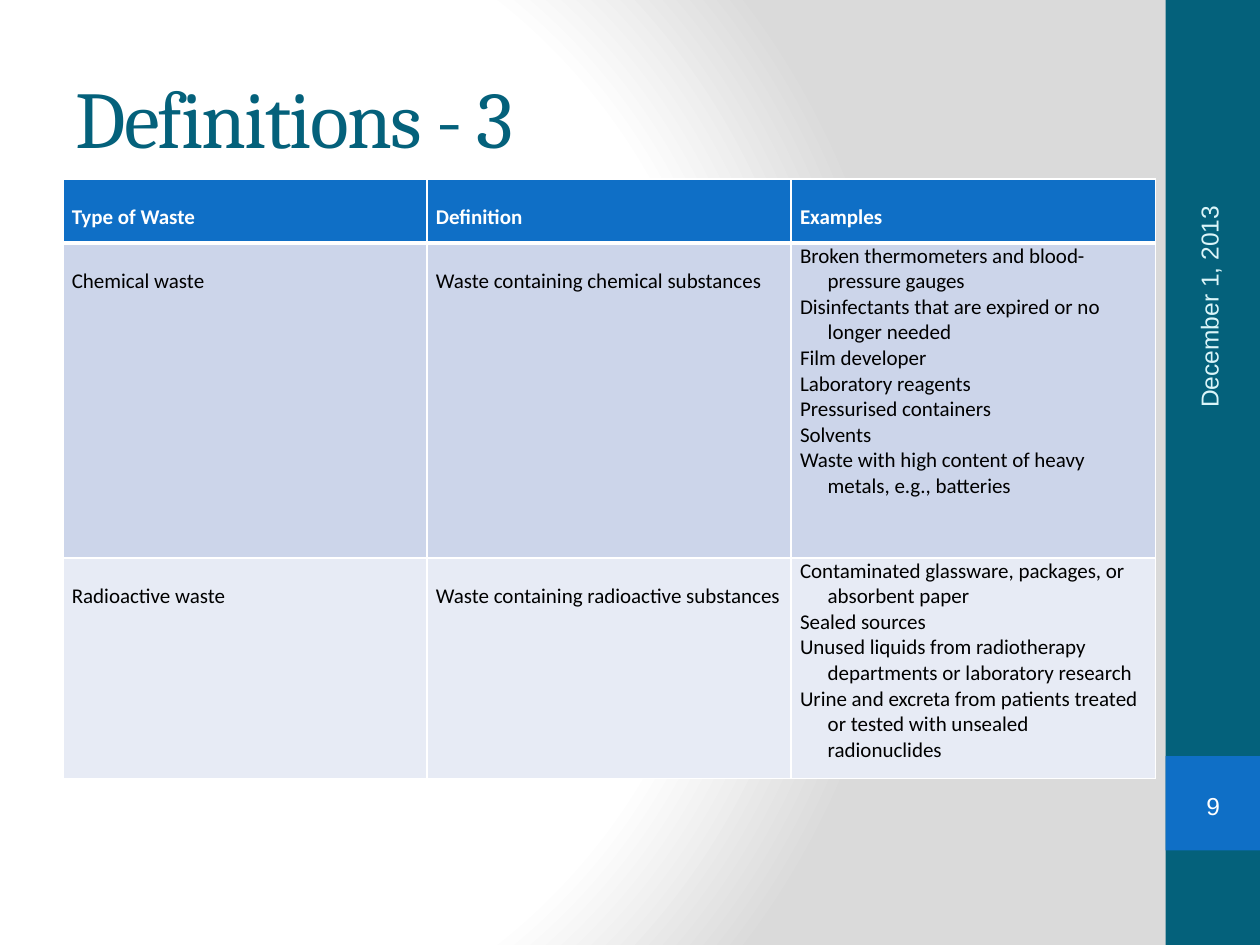
from lxml import etree
from pptx import Presentation
from pptx.dml.color import RGBColor
from pptx.enum import shapes, text
from pptx.oxml import parse_xml
from pptx.oxml.ns import nsdecls, qn
from pptx.util import Inches, Pt

TEAL = RGBColor(0x04, 0x61, 0x7B)
BLUE = RGBColor(0x0F, 0x6F, 0xC6)
PALE_CYAN = RGBColor(0xDB, 0xF5, 0xF9)
WHITE = RGBColor(0xFF, 0xFF, 0xFF)
BLACK = RGBColor(0, 0, 0)
GREY = RGBColor(0xDA, 0xDA, 0xDA)
ROW_FILLS = [BLUE, RGBColor(0xCC, 0xD5, 0xEA), RGBColor(0xE7, 0xEB, 0xF5)]

HEADERS = ["Type of Waste", "Definition", "Examples"]
WASTES = [
    ("Chemical waste", "Waste containing chemical substances", [
        "Broken thermometers and blood-pressure gauges",
        "Disinfectants that are expired or no longer needed",
        "Film developer",
        "Laboratory reagents",
        "Pressurised containers",
        "Solvents",
        "Waste with high content of heavy metals, e.g., batteries",
    ]),
    ("Radioactive waste", "Waste containing radioactive substances", [
        "Contaminated glassware, packages, or absorbent paper",
        "Sealed sources",
        "Unused liquids from radiotherapy departments or laboratory research",
        "Urine and excreta from patients treated or tested with unsealed radionuclides",
    ]),
]
ROW_HEIGHTS = [0.51, 2.5, 1.75]


def style_runs(paragraph, name, size, color, bold=False):
    for run in paragraph.runs:
        run.font.name = name
        run.font.size = Pt(size)
        run.font.color.rgb = color
        run.font.bold = bold


def add_background(slide):
    slide.background.fill.gradient()
    gradient = slide.element.find(".//" + qn("a:gradFill"))
    stops = "".join(
        f'<a:gs pos="{position * 1000}"><a:srgbClr val="{color}"/></a:gs>'
        for position, color in [(0, WHITE), (75, WHITE), (100, GREY)])
    gradient.getparent().replace(gradient, parse_xml(
        f'<a:gradFill {nsdecls("a")} rotWithShape="1"><a:gsLst>{stops}</a:gsLst>'
        '<a:path path="circle"><a:fillToRect l="20000" t="50000" r="100000" b="50000"/>'
        '</a:path></a:gradFill>'))


def add_plain_shape(slide, kind, left, top, width, height, fill=None):
    shape = slide.shapes.add_shape(
        kind, Inches(left), Inches(top), Inches(width), Inches(height))
    shape.shadow.inherit = False
    shape.line.fill.background()
    if fill is None:
        shape.fill.background()
    else:
        shape.fill.solid()
        shape.fill.fore_color.rgb = fill
    return shape


def add_sidebar(slide, left, top, width, height):
    kinds = shapes.MSO_SHAPE
    add_plain_shape(slide, kinds.RECTANGLE, left, top, width, height, TEAL)
    add_plain_shape(slide, kinds.RECTANGLE, left, top + 6, width, width, BLUE)

    # Date, reading upwards
    date = slide.shapes.add_textbox(
        Inches(left - 0.99), Inches(top + 1.8), Inches(2.67), Inches(0.4))
    date.rotation = 270
    frame = date.text_frame
    frame.word_wrap = True
    frame.vertical_anchor = text.MSO_ANCHOR.MIDDLE
    frame.text = "December 1, 2013"
    style_runs(frame.paragraphs[0], "Arial", 14, PALE_CYAN)

    # Slide number
    number = add_plain_shape(
        slide, kinds.DOUBLE_BRACKET, left + 0.08, top + 6.18, 0.6, 0.43)
    number.adjustments[0] = 0.18
    frame = number.text_frame
    frame.margin_left = frame.margin_right = frame.margin_top = frame.margin_bottom = 0
    frame.vertical_anchor = text.MSO_ANCHOR.MIDDLE
    frame.text = "9"
    frame.paragraphs[0].alignment = text.PP_ALIGN.CENTER
    style_runs(frame.paragraphs[0], "Arial", 14, WHITE)


def add_title(slide, left, top, width, height):
    title = slide.shapes.title
    title.left, title.top = Inches(left), Inches(top)
    title.width, title.height = Inches(width), Inches(height)
    frame = title.text_frame
    frame.text = "Definitions - 3"
    frame.vertical_anchor = text.MSO_ANCHOR.MIDDLE
    paragraph = frame.paragraphs[0]
    paragraph.alignment = text.PP_ALIGN.LEFT
    style_runs(paragraph, "Cambria", 46, TEAL)
    paragraph.runs[0].font._element.set("spc", "-100")


def set_borders(cell, row):
    thick_side = {0: "lnB", 1: "lnT"}.get(row)
    properties = cell._tc.get_or_add_tcPr()
    for side in ("lnL", "lnR", "lnT", "lnB"):
        points = 3 if side == thick_side else 1
        line = etree.SubElement(properties, qn("a:" + side), w=str(Pt(points)))
        fill = etree.SubElement(line, qn("a:solidFill"))
        etree.SubElement(fill, qn("a:srgbClr"), val=str(WHITE))


def fill_cell(cell, content, row):
    cell.margin_left = cell.margin_right = Inches(0.07)
    cell.margin_top = cell.margin_bottom = 0
    set_borders(cell, row)
    cell.fill.solid()
    cell.fill.fore_color.rgb = ROW_FILLS[row]
    is_list = isinstance(content, list)
    cell.text_frame.text = "\n".join(content) if is_list else content
    for paragraph in cell.text_frame.paragraphs:
        if is_list:
            # Hanging indent for the examples
            properties = paragraph._p.get_or_add_pPr()
            properties.set("marL", str(Inches(0.22)))
            properties.set("indent", str(Inches(-0.22)))
        else:
            paragraph.line_spacing = 2.0
        style_runs(paragraph, "Calibri", 12, BLACK if row else WHITE, bold=row == 0)


def add_waste_table(slide, left, top, width, height):
    rows = [HEADERS, *WASTES]
    table = slide.shapes.add_table(
        len(rows), len(HEADERS),
        Inches(left), Inches(top), Inches(width), Inches(height)).table
    for column in table.columns:
        column.width = Inches(width / len(HEADERS))
    for row, contents in enumerate(rows):
        table.rows[row].height = Inches(ROW_HEIGHTS[row])
        for column, content in enumerate(contents):
            fill_cell(table.cell(row, column), content, row)


def main():
    presentation = Presentation()
    presentation.slide_width, presentation.slide_height = Inches(10), Inches(7.5)
    slide = presentation.slides.add_slide(presentation.slide_layouts[5])
    add_background(slide)
    add_sidebar(slide, 9.25, 0, 0.75, 7.5)
    add_title(slide, 0.5, 0.3, 8.33, 1.25)
    add_waste_table(slide, 0.5, 1.42, 8.67, sum(ROW_HEIGHTS))
    presentation.save("out.pptx")


if __name__ == "__main__":
    main()
